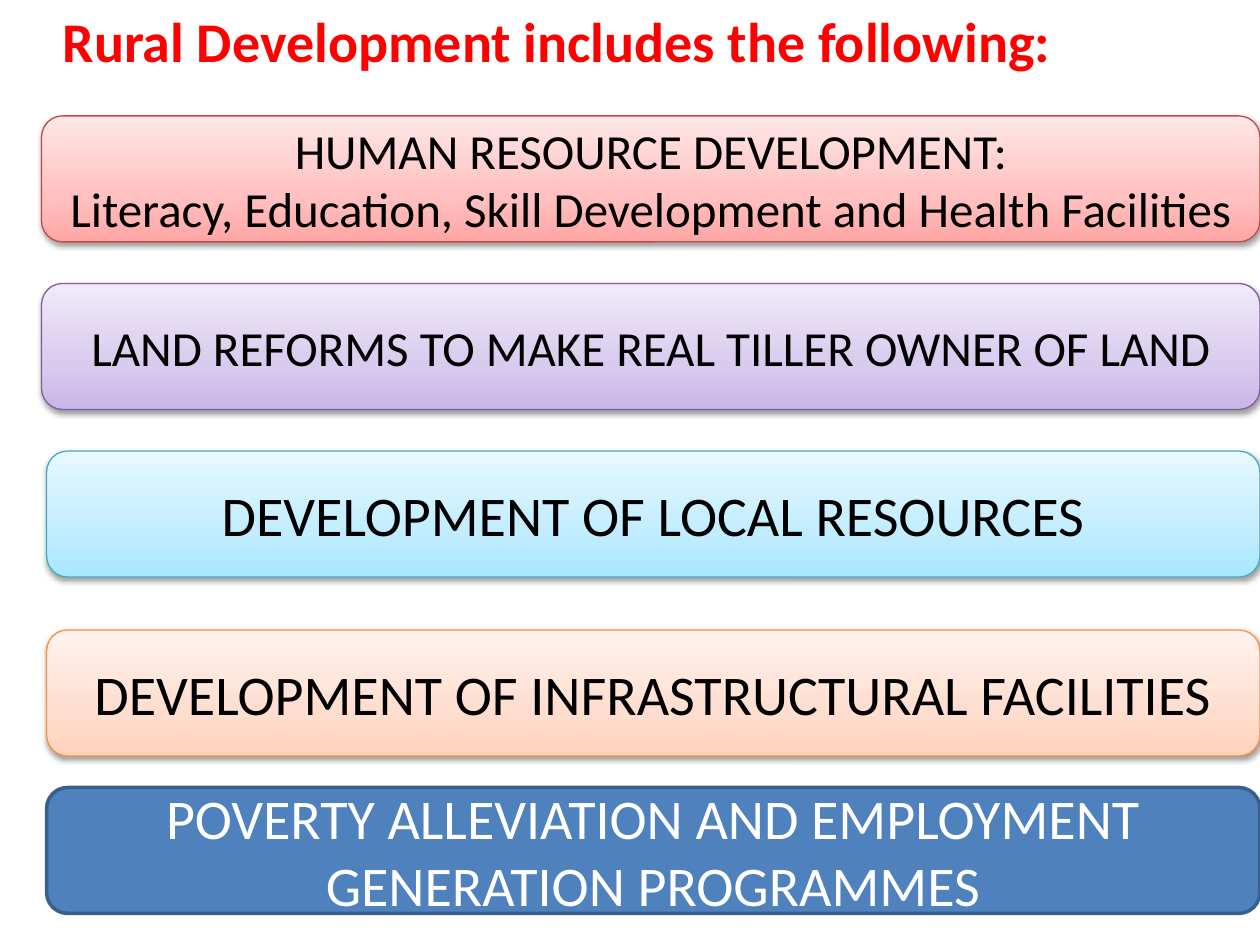
from dataclasses import dataclass
from typing import Optional

from lxml.etree import SubElement
from pptx import Presentation
from pptx.dml.color import RGBColor
from pptx.enum.shapes import MSO_SHAPE as Shape
from pptx.enum.text import MSO_ANCHOR as Anchor, PP_ALIGN as Align
from pptx.oxml.ns import qn
from pptx.util import Inches, Pt


@dataclass(frozen=True)
class Theme:
    font: str = "Calibri"
    heading: str = "FF0000"
    dark: str = "000000"
    light: str = "FFFFFF"
    large: int = 32
    medium: int = 28


@dataclass(frozen=True)
class Bar:
    lines: tuple[str, ...]
    left: float
    top: float
    size: int
    fill: tuple[str, ...]  # one solid colour, or gradient colours from the bottom up
    border: str
    border_width: float = 0.75


THEME = Theme()
SLIDE_WIDTH, SLIDE_HEIGHT, BAR_HEIGHT = 10, 7.5, 1
GRADIENT_STOPS = (0, 35, 100)

BARS = (
    Bar(("HUMAN RESOURCE DEVELOPMENT:",
         "Literacy, Education, Skill Development and Health Facilities"),
        0.33, 0.92, THEME.medium, ("FFA6A5", "FFC0BF", "FFE7E7"), "BF4C48"),
    Bar(("LAND REFORMS TO MAKE REAL TILLER OWNER OF LAND",),
        0.33, 2.25, THEME.medium, ("C9B5E8", "D8CBEE", "F0EAF9"), "7D60A0"),
    Bar(("DEVELOPMENT OF LOCAL RESOURCES",),
        0.37, 3.58, THEME.large, ("A7E6FF", "C1EDFF", "E7F8FF"), "46AAC5"),
    Bar(("DEVELOPMENT OF INFRASTRUCTURAL FACILITIES",),
        0.37, 5, THEME.large, ("FFD2BD", "FFDED0", "FFF2ED"), "F69240"),
    Bar(("POVERTY ALLEVIATION AND EMPLOYMENT GENERATION PROGRAMMES",),
        0.37, 6.25, THEME.large, ("4F81BD",), "3A5F8C", 2),
)


def write_text(frame, *lines: str, size: int, color: str, bold: bool = False,
               align: Align = Align.LEFT, anchor: Anchor = Anchor.TOP,
               indent: Optional[float] = None) -> None:
    frame.word_wrap = True
    frame.vertical_anchor = anchor
    for number, line in enumerate(lines):
        paragraph = frame.add_paragraph() if number else frame.paragraphs[0]
        paragraph.alignment = align
        if indent is not None:
            paragraph._p.get_or_add_pPr().set("marL", str(Inches(indent)))
        run = paragraph.add_run()
        run.text = line
        run.font.name = THEME.font
        run.font.size = Pt(size)
        run.font.bold = bold
        run.font.color.rgb = RGBColor.from_string(color)


def fill_gradient(shape, colors: tuple[str, ...]) -> None:
    shape.fill.gradient()
    shape.fill.gradient_angle = 90
    stops = shape._element.spPr.find(f".//{qn('a:gsLst')}")
    for stop in list(stops):
        stops.remove(stop)
    for position, color in zip(GRADIENT_STOPS, colors):
        stop = SubElement(stops, qn("a:gs"), pos=str(position * 1000))
        SubElement(stop, qn("a:srgbClr"), val=color)


def add_soft_shadow(shape) -> None:
    effects = shape._element.spPr.find(qn("a:effectLst"))
    shadow = SubElement(effects, qn("a:outerShdw"), blurRad=str(Pt(3.1)),
                        dist=str(Pt(1.6)), dir="5400000", rotWithShape="0")
    color = SubElement(shadow, qn("a:srgbClr"), val=THEME.dark)
    SubElement(color, qn("a:alpha"), val="38000")


def draw_bar(slide, bar: Bar) -> None:
    # Every bar runs to the right edge of the slide
    shape = slide.shapes.add_shape(
        Shape.ROUNDED_RECTANGLE, Inches(bar.left), Inches(bar.top),
        Inches(SLIDE_WIDTH - bar.left), Inches(BAR_HEIGHT))
    shape.line.color.rgb = RGBColor.from_string(bar.border)
    shape.line.width = Pt(bar.border_width)
    shape.shadow.inherit = False
    is_solid = len(bar.fill) == 1
    if is_solid:
        shape.fill.solid()
        shape.fill.fore_color.rgb = RGBColor.from_string(bar.fill[0])
    else:
        fill_gradient(shape, bar.fill)
        add_soft_shadow(shape)
    write_text(shape.text_frame, *bar.lines, size=bar.size,
               color=THEME.light if is_solid else THEME.dark,
               align=Align.CENTER, anchor=Anchor.MIDDLE)


def main() -> None:
    deck = Presentation()
    deck.slide_width, deck.slide_height = Inches(SLIDE_WIDTH), Inches(SLIDE_HEIGHT)
    slide = deck.slides.add_slide(deck.slide_layouts[6])

    # Heading
    heading = slide.shapes.add_textbox(0, 0, deck.slide_width, deck.slide_height)
    write_text(heading.text_frame, "Rural Development includes the following:",
               size=THEME.large, color=THEME.heading, bold=True, indent=0.4)

    # Components of rural development
    for bar in BARS:
        draw_bar(slide, bar)

    deck.save("out.pptx")


if __name__ == "__main__":
    main()
